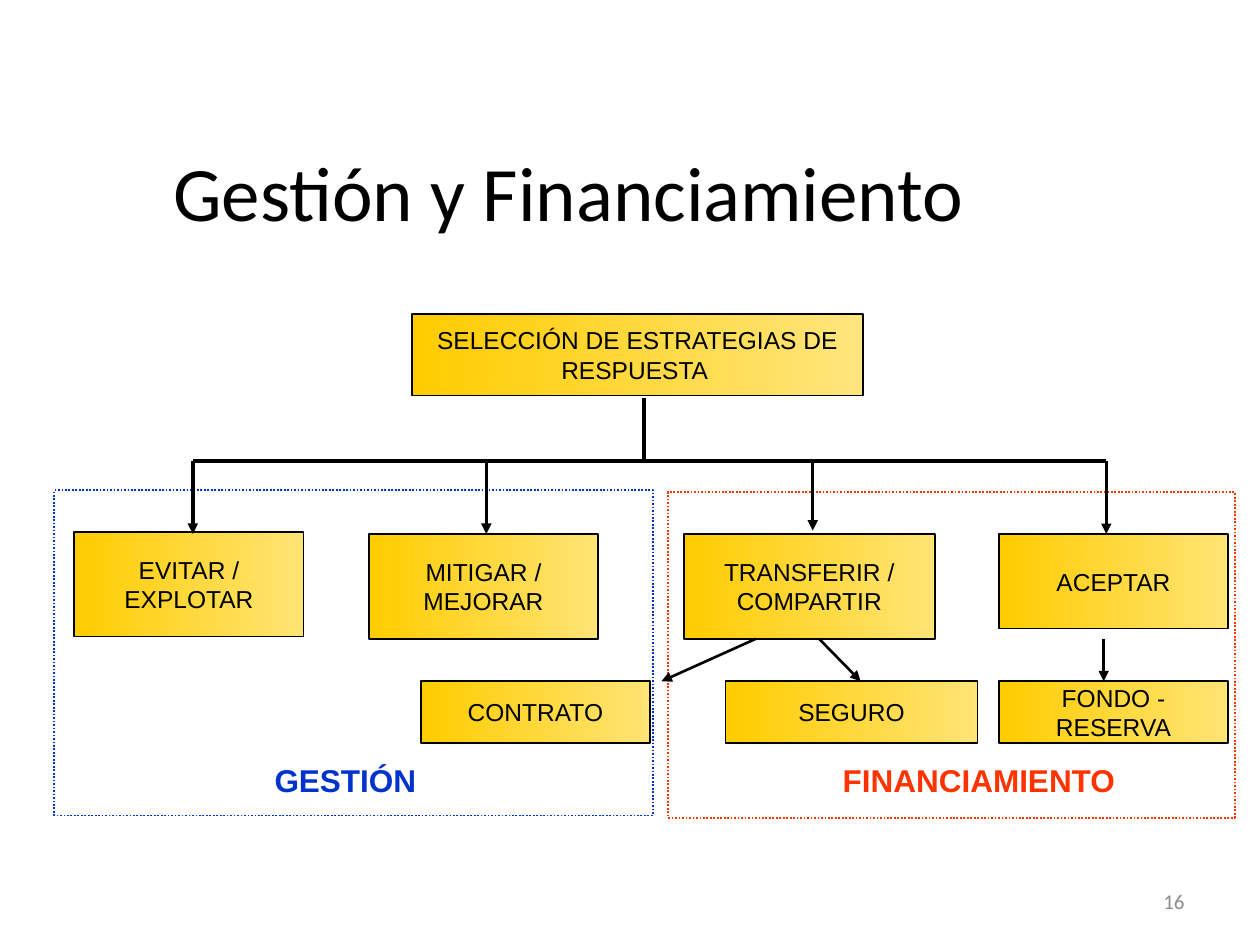
from lxml import etree
from pptx import Presentation
from pptx.dml.color import RGBColor
from pptx.enum.dml import MSO_LINE
from pptx.enum.shapes import MSO_CONNECTOR, MSO_SHAPE
from pptx.enum.text import MSO_ANCHOR, MSO_AUTO_SIZE, PP_ALIGN
from pptx.oxml.ns import qn
from pptx.util import Pt

RECT = MSO_SHAPE.RECTANGLE
LINE = MSO_CONNECTOR.STRAIGHT
DOTS = MSO_LINE.ROUND_DOT
MIDDLE, TOP = MSO_ANCHOR.MIDDLE, MSO_ANCHOR.TOP
LEFT, CENTER, RIGHT = PP_ALIGN.LEFT, PP_ALIGN.CENTER, PP_ALIGN.RIGHT
FIT = MSO_AUTO_SIZE.SHAPE_TO_FIT_TEXT

BLACK = RGBColor(0x00, 0x00, 0x00)
WHITE = RGBColor(0xFF, 0xFF, 0xFF)
GRAY = RGBColor(0x8C, 0x8C, 0x8C)
BLUE = RGBColor(0x00, 0x33, 0xCC)
RED = RGBColor(0xFF, 0x33, 0x00)
GOLD = RGBColor(0xFF, 0xCC, 0x00)
PALE = RGBColor(0xFF, 0xE4, 0x76)
CREAM = RGBColor(0xFF, 0xE5, 0x7D)

RAIL = 263.5
ROW = 305.2
BASE = 389.3
WIDE = 131
TALL = 59.8
LOW = 35.3


def write(shape, text, size, font, color, align, anchor, bold=False):
    frame = shape.text_frame
    frame.word_wrap = True
    frame.vertical_anchor = anchor
    frame.text = text
    para = frame.paragraphs[0]
    para.alignment = align
    style = para.runs[0].font
    style.name = font
    style.size = Pt(size)
    style.bold = bold
    style.color.rgb = color


def add_text(slide, place, *style):
    shape = slide.shapes.add_textbox(*map(Pt, place))
    write(shape, *style)
    return shape


def add_label(slide, place, text, color):
    shape = add_text(slide, place, text, 18, "Arial", color, LEFT, TOP, True)
    shape.text_frame.word_wrap = False
    shape.text_frame.auto_size = FIT


def add_rect(slide, place, color):
    shape = slide.shapes.add_shape(RECT, *map(Pt, place))
    shape.shadow.inherit = False
    shape.line.color.rgb = color
    shape.line.width = Pt(1)
    return shape


def add_panel(slide, place, color):
    shape = add_rect(slide, place, color)
    shape.fill.solid()
    shape.fill.fore_color.rgb = WHITE
    shape.line.dash_style = DOTS


def add_box(slide, place, text, light=PALE):
    shape = add_rect(slide, place, BLACK)
    shape.fill.gradient()
    shape.fill.gradient_angle = 0
    for stop, spot, color in zip(shape.fill.gradient_stops, (0, 1), (GOLD, light)):
        stop.position = spot
        stop.color.rgb = color
    write(shape, text, 14, "Arial", BLACK, CENTER, MIDDLE)


def add_line(slide, start, end, width=2, arrow=True):
    line = slide.shapes.add_connector(LINE, *map(Pt, start + end))
    line.line.color.rgb = BLACK
    line.line.width = Pt(width)
    props = line._element.spPr
    etree.SubElement(props, qn("a:effectLst"))
    if arrow:
        tip = etree.SubElement(props.find(qn("a:ln")), qn("a:tailEnd"))
        tip.set("type", "triangle")


def main():
    deck = Presentation()
    deck.slide_width, deck.slide_height = Pt(720), Pt(540)
    slide = deck.slides.add_slide(deck.slide_layouts[6])

    add_text(slide, (516, 500.5, 168, 28.8), "16", 12, "Calibri", GRAY, RIGHT, MIDDLE)
    add_panel(slide, (31, 280.1, 342, 186), BLUE)
    add_panel(slide, (381.6, 281.3, 324, 186), RED)
    add_text(slide, (48, 77, 554.4, 63.4), "Gestión y Financiamiento",
             44, "Calibri", BLACK, CENTER, MIDDLE)

    add_box(slide, (235.4, 179.3, 257.8, 46.8),
            "SELECCIÓN DE ESTRATEGIAS DE RESPUESTA ", CREAM)
    boxes = [
        ("EVITAR / EXPLOTAR", 42.5, ROW - 1.2, WIDE, TALL),
        ("MITIGAR / MEJORAR", 210.8, ROW, WIDE, TALL),
        ("TRANSFERIR / COMPARTIR", 390.8, ROW, 143.3, TALL),
        ("ACEPTAR", 570.8, ROW, WIDE, 54),
        ("CONTRATO", 240.5, BASE, WIDE, LOW),
        ("SEGURO", 414.6, BASE, 144, LOW),
        ("FONDO - RESERVA", 570.8, BASE, WIDE, LOW),
    ]
    for text, *place in boxes:
        add_box(slide, place, text)

    add_label(slide, (149.8, 431.3, 100, 28.8), "GESTIÓN", BLUE)
    add_label(slide, (474.5, 431.3, 172, 28.8), "FINANCIAMIENTO", RED)

    add_line(slide, (367.9, 227.5), (367.9, RAIL), arrow=False)
    add_line(slide, (632.2, RAIL), (110.2, RAIL), arrow=False)
    drops = [(110.2, ROW, 2), (277.9, ROW, 2), (464.4, ROW - 2, 2), (632.2, ROW, 1.5)]
    for x, end, width in drops:
        add_line(slide, (x, RAIL), (x, end), width)
    for start, end in [(432, 378), (468, 491.8), (630.7, 630.7)]:
        add_line(slide, (start, ROW + TALL), (end, BASE), 1.5)

    deck.save("out.pptx")


if __name__ == "__main__":
    main()
